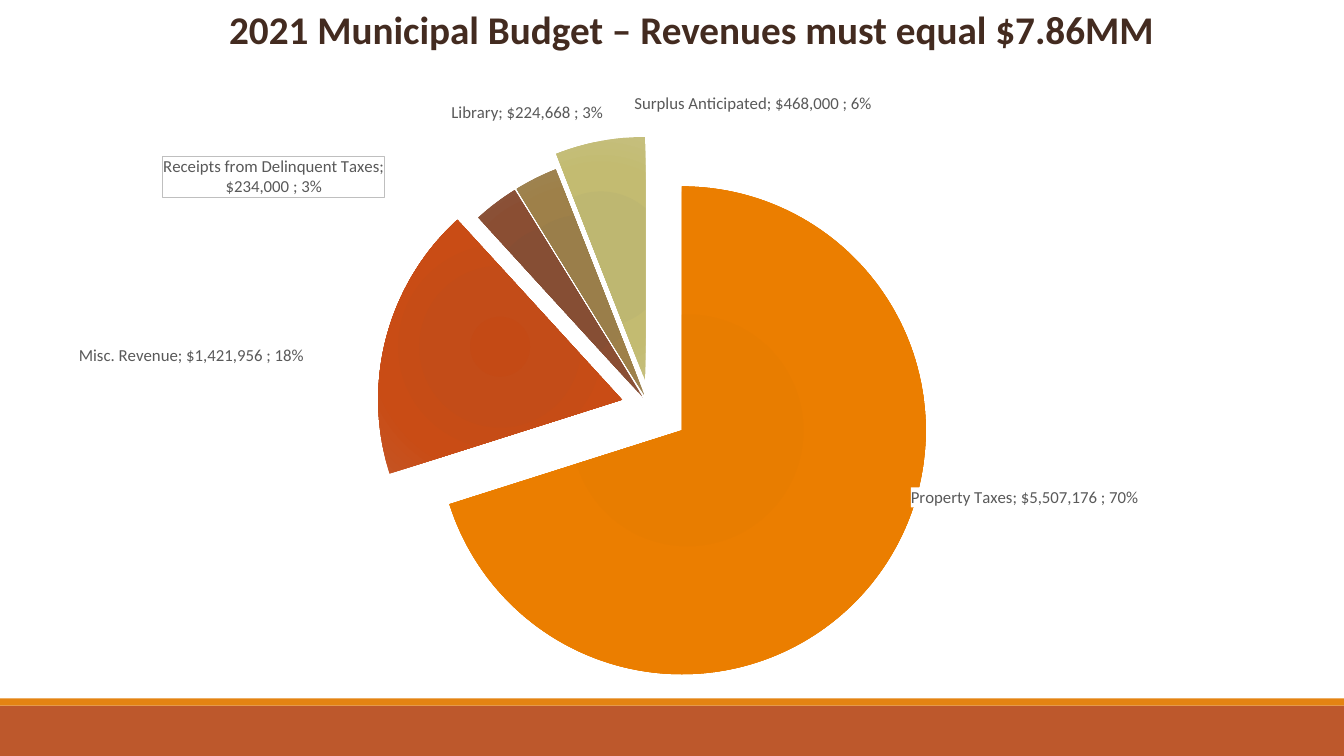
from pptx import Presentation
from pptx.chart.data import CategoryChartData
from pptx.dml.color import RGBColor
from pptx.enum.chart import XL_CHART_TYPE
from pptx.enum.shapes import MSO_SHAPE
from pptx.enum.text import MSO_ANCHOR, PP_ALIGN
from pptx.oxml import parse_xml
from pptx.oxml.ns import nsdecls, qn
from pptx.util import Cm, Pt

TITLE = "2021 Municipal Budget – Revenues must equal $7.86MM"
FONT = "Calibri"
TITLE_BROWN = RGBColor(0x43, 0x2B, 0x20)
LABEL_GRAY = RGBColor(0x59, 0x59, 0x59)
BORDER_GRAY = RGBColor(0xBF, 0xBF, 0xBF)
WHITE = RGBColor(0xFF, 0xFF, 0xFF)
RUST = RGBColor(0xBD, 0x58, 0x2C)
ORANGE = RGBColor(0xE4, 0x83, 0x12)

REVENUES = [
    ("Property Taxes", 5507176, 16, (0.69, -2.28), ("E57B00", "E87D00", "EB7E00", "EF8407")),
    ("Misc. Revenue", 1421956, 12, (-1.93, 0.77), ("C44A15", "C34C18", "C94C15", "C45525")),
    ("Receipts from Delinquent Taxes", 234000, 5, (-2.71, -0.02), ("874C32", "864E34", "8A4E33", "8A553D")),
    ("Library", 224668, 5, (1.77, -1.26), ("9A7D48", "9A7E4A", "9E8049", "9E8454")),
    ("Surplus Anticipated", 468000, 11, (6.88, -0.54), ("BEB76E", "BEB771", "C3BB71", "C5BF7D")),
]
GRADIENT_STOPS = (0, 34, 70, 100)
FILLED_LABEL = "Property Taxes"
BOXED_LABEL = "Receipts from Delinquent Taxes"
BOXED_LABEL_SIZE = (5.69, 1)
CHART_SIZE = (33.45, 16.74)
PLOT_CORNER = (2.14, 1.93)
PLOT_SIZE = (28.5, 12.91)
NUMBER_FORMAT = '"$"#,##0_);[Red]\\("$"#,##0\\)'
FOOTER_BARS = [(17.78, 1.27, RUST), (17.6, 0.18, ORANGE)]


def chart_xml(tag, body="", attributes=""):
    return parse_xml(f'<c:{tag} {nsdecls("c", "a")} {attributes}>{body}</c:{tag}>')


def chart_fractions(keys, lengths):
    return "".join(
        f'<c:{key} val="{length / full:.4f}"/>'
        for key, length, full in zip(keys, lengths, CHART_SIZE)
    )


def solid(color):
    return f'<a:solidFill><a:srgbClr val="{color}"/></a:solidFill>'


def radial_fill(colors):
    stops = "".join(
        f'<a:gs pos="{stop * 1000}"><a:srgbClr val="{color}"/></a:gs>'
        for stop, color in zip(GRADIENT_STOPS, colors)
    )
    return parse_xml(
        f'<a:gradFill {nsdecls("a")} rotWithShape="1"><a:gsLst>{stops}</a:gsLst>'
        '<a:path path="circle"><a:fillToRect l="100000" t="100000" r="100000" b="100000"/>'
        '</a:path></a:gradFill>'
    )


def label_format(name=""):
    fill = solid(WHITE) if name in (FILLED_LABEL, BOXED_LABEL) else "<a:noFill/>"
    border = solid(BORDER_GRAY) if name == BOXED_LABEL else "<a:noFill/>"
    return (
        f'<c:spPr>{fill}<a:ln w="9525">{border}</a:ln></c:spPr>'
        f'<c:txPr><a:bodyPr wrap="square" lIns="0" tIns="0" rIns="0" bIns="0"/><a:p><a:pPr>'
        f'<a:defRPr sz="1200" b="0">{solid(LABEL_GRAY)}<a:latin typeface="{FONT}"/></a:defRPr>'
        '</a:pPr><a:endParaRPr lang="en-US"/></a:p></c:txPr>'
        '<c:dLblPos val="outEnd"/><c:showLegendKey val="0"/><c:showVal val="1"/>'
        '<c:showCatName val="1"/><c:showSerName val="0"/><c:showPercent val="1"/>'
        '<c:showBubbleSize val="0"/><c:separator>; </c:separator>'
    )


def label_xml(index, name, shift):
    size = ""
    if name == BOXED_LABEL:
        size = (
            '<c:extLst><c:ext uri="{CE6537A1-D6FC-4f65-9D91-7224C49458BB}" '
            'xmlns:c15="http://schemas.microsoft.com/office/drawing/2012/chart"><c15:layout>'
            f'<c:manualLayout>{chart_fractions("wh", BOXED_LABEL_SIZE)}</c:manualLayout>'
            '</c15:layout></c:ext></c:extLst>'
        )
    return (
        f'<c:dLbl><c:idx val="{index}"/><c:layout><c:manualLayout>'
        f'{chart_fractions("xy", shift)}</c:manualLayout></c:layout>'
        f'{label_format(name)}{size}</c:dLbl>'
    )


def add_footer(slide, width):
    for top, height, color in FOOTER_BARS:
        bar = slide.shapes.add_shape(MSO_SHAPE.RECTANGLE, 0, Cm(top), width, Cm(height))
        bar.shadow.inherit = False
        bar.fill.solid()
        bar.fill.fore_color.rgb = color
        bar.line.fill.background()


def format_title(title):
    title.left, title.top, title.width, title.height = Cm(3.35), 0, Cm(28.14), Cm(1.45)
    frame = title.text_frame
    frame.text = TITLE
    frame.word_wrap = True
    frame.vertical_anchor = MSO_ANCHOR.MIDDLE
    paragraph = frame.paragraphs[0]
    paragraph.alignment = PP_ALIGN.CENTER
    font = paragraph.runs[0].font
    font.name, font.size, font.bold = FONT, Pt(28), True
    font.color.rgb = TITLE_BROWN


def add_revenue_pie(slide):
    revenue_data = CategoryChartData(number_format=NUMBER_FORMAT)
    revenue_data.categories = [revenue[0] for revenue in REVENUES]
    revenue_data.add_series("Series 1", [revenue[1] for revenue in REVENUES])
    width, height = CHART_SIZE
    pie = slide.shapes.add_chart(
        XL_CHART_TYPE.PIE, 0, Cm(1.88), Cm(width), Cm(height), revenue_data
    ).chart
    pie.has_title = False
    pie.has_legend = False
    pie.font.name, pie.font.size = FONT, Pt(10)
    plot = pie.plots[0]
    plot.vary_by_categories = True

    plot_area = plot._element.getparent()
    for layout in plot_area.findall(qn("c:layout")):
        plot_area.remove(layout)
    place = '<c:layoutTarget val="inner"/><c:xMode val="edge"/><c:yMode val="edge"/>'
    place += chart_fractions("xy", PLOT_CORNER) + chart_fractions("wh", PLOT_SIZE)
    plot_area.insert(0, chart_xml("layout", f"<c:manualLayout>{place}</c:manualLayout>"))

    series = plot.series[0]
    categories = series._element.find(qn("c:cat"))
    categories.addprevious(chart_xml("explosion", attributes='val="5"'))
    labels = ""
    for index, (name, _, explosion, shift, colors) in enumerate(REVENUES):
        slice_format = series.points[index].format
        slice_format.fill.background()
        slice_format.line.fill.background()
        slice_properties = series._element.findall(qn("c:dPt"))[index].find(qn("c:spPr"))
        slice_properties.replace(slice_properties.find(qn("a:noFill")), radial_fill(colors))
        slice_properties.addprevious(chart_xml("explosion", attributes=f'val="{explosion}"'))
        labels += label_xml(index, name, shift)
    labels += label_format() + '<c:showLeaderLines val="0"/>'
    categories.addprevious(chart_xml("dLbls", labels))


def main():
    deck = Presentation()
    deck.slide_width, deck.slide_height = Cm(33.87), Cm(19.05)
    slide = deck.slides.add_slide(deck.slide_layouts[5])
    add_footer(slide, deck.slide_width)
    format_title(slide.shapes.title)
    add_revenue_pie(slide)
    deck.save("out.pptx")


if __name__ == "__main__":
    main()
